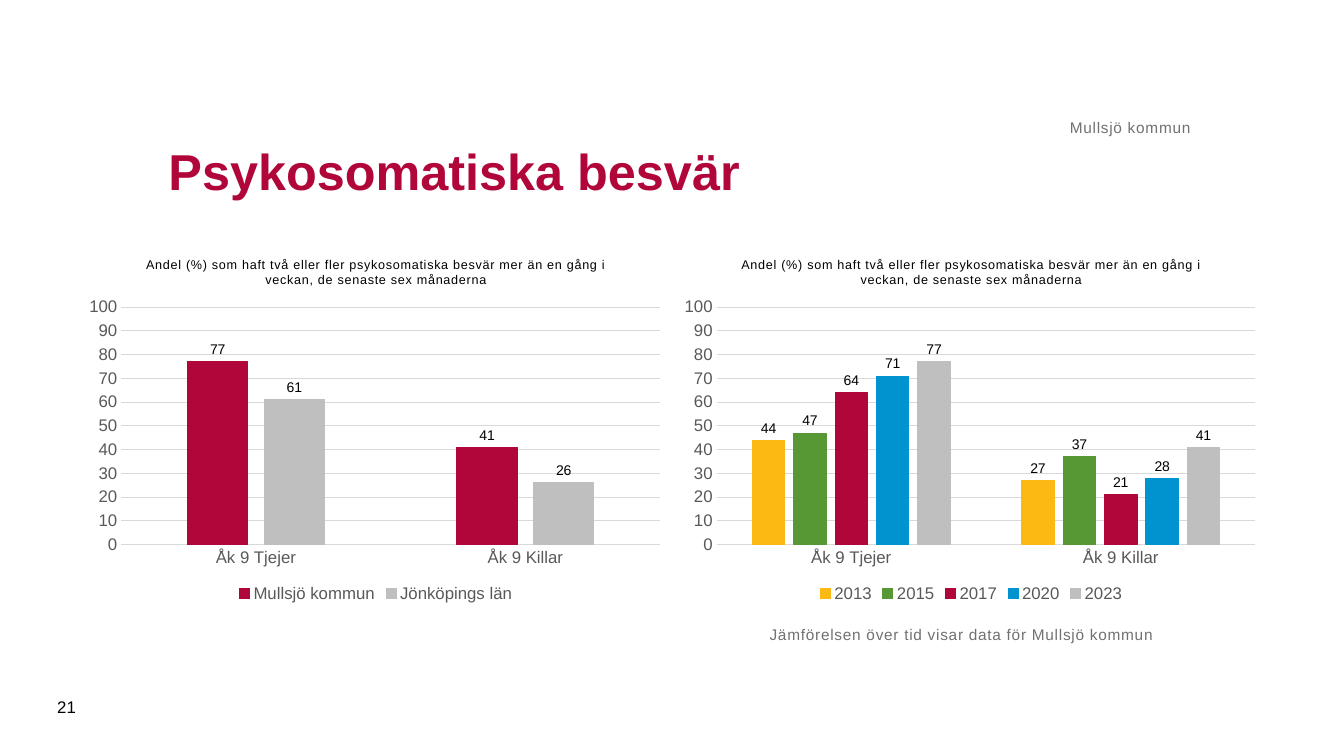
from lxml import etree
from pptx import Presentation
from pptx.chart.data import CategoryChartData
from pptx.dml.color import RGBColor
from pptx.enum.chart import XL_CHART_TYPE, XL_LABEL_POSITION, XL_LEGEND_POSITION, XL_TICK_MARK
from pptx.enum.text import MSO_ANCHOR, PP_ALIGN
from pptx.oxml import parse_xml
from pptx.oxml.ns import nsdecls
from pptx.util import Pt

PX = 9525
FONT = "Arial"
NUMBER_FORMAT = "#,##0;#,##0"
COLORS = {
    "crimson": "B1063A", "silver": "BFBFBF", "yellow": "FDB913", "green": "579835",
    "blue": "0093D0", "grid": "D9D9D9", "axis": "595959", "muted": "717171", "black": "000000",
}
CATEGORIES = ["Åk 9 Tjejer", "Åk 9 Killar"]
CHART_TITLE = ("Andel (%) som haft två eller fler psykosomatiska besvär mer än en gång i veckan, "
               "de senaste sex månaderna")
REGION_SERIES = [
    ("Mullsjö kommun", [77, 41], "crimson"),
    ("Jönköpings län", [61, 26], "silver"),
]
YEAR_SERIES = [
    ("2013", [44, 27], "yellow"),
    ("2015", [47, 37], "green"),
    ("2017", [64, 21], "crimson"),
    ("2020", [71, 28], "blue"),
    ("2023", [77, 41], "silver"),
]


def box(*lengths):
    """Turn px lengths into EMU."""
    return [n * PX for n in lengths]


def rgb(name):
    """Look up a named colour."""
    return RGBColor.from_string(COLORS[name])


def style_font(font, size, color, bold=False):
    """Set typeface, size, colour and weight."""
    font.name, font.size, font.bold = FONT, Pt(size), bold
    font.color.rgb = rgb(color)


def style_line(line, color):
    """Give a line its colour and the common thin width."""
    line.color.rgb = rgb(color)
    line.width = Pt(0.75)


def add_text(s, at, text, size, color, bold=False, anchor=MSO_ANCHOR.TOP,
             align=PP_ALIGN.LEFT, inset=True, spacing=0):
    """Add a one-paragraph text box."""
    tf = s.shapes.add_textbox(*box(*at)).text_frame
    tf.word_wrap = True
    tf.vertical_anchor = anchor
    if not inset:
        tf.margin_left = tf.margin_top = tf.margin_right = tf.margin_bottom = 0
    p = tf.paragraphs[0]
    p.alignment = align
    r = p.add_run()
    r.text = text
    style_font(p.font, size, color, bold)
    if spacing:
        r._r.get_or_add_rPr().set("spc", str(spacing))


def set_plot_area(chart, x, y, w, h):
    """Fix the inner plot area as fractions of the chart."""
    plot_area = chart._chartSpace.chart.plotArea
    for old in plot_area.findall("{*}layout"):
        plot_area.remove(old)
    layout = parse_xml(f"<c:layout {nsdecls('c')}><c:manualLayout/></c:layout>")
    values = [("layoutTarget", "inner"), ("xMode", "edge"), ("yMode", "edge"),
              ("x", x), ("y", y), ("w", w), ("h", h)]
    for tag, value in values:
        etree.SubElement(layout[0], f"{{{layout.nsmap['c']}}}{tag}").set("val", str(value))
    plot_area.insert(0, layout)


def style_axes(chart):
    """Format the category and value axes."""
    for axis in (chart.category_axis, chart.value_axis):
        axis.major_tick_mark = axis.minor_tick_mark = XL_TICK_MARK.NONE
        style_font(axis.tick_labels.font, 12, "axis")
    style_line(chart.category_axis.format.line, "grid")
    values = chart.value_axis
    values.minimum_scale, values.maximum_scale, values.major_unit = 0, 100, 10
    values.tick_labels.number_format = NUMBER_FORMAT
    values.tick_labels.number_format_is_linked = False
    values.format.line.fill.background()
    style_line(values.major_gridlines.format.line, "grid")


def add_column_chart(s, at, series):
    """Add a titled column chart with value labels."""
    data = CategoryChartData(number_format=NUMBER_FORMAT)
    data.categories = CATEGORIES
    for name, values, _ in series:
        data.add_series(name, values)
    chart = s.shapes.add_chart(XL_CHART_TYPE.COLUMN_CLUSTERED, *box(*at), data).chart
    style_font(chart.font, 10, "black")

    p = chart.chart_title.text_frame.paragraphs[0]
    r = p.add_run()
    r.text = CHART_TITLE
    style_font(p.font, 9, "black")
    style_font(r.font, 9, "black")
    r._r.get_or_add_rPr().set("spc", "50")
    chart.chart_title.include_in_layout = False

    chart.has_legend = True
    chart.legend.position = XL_LEGEND_POSITION.BOTTOM
    chart.legend.include_in_layout = False
    style_font(chart.legend.font, 12, "axis")
    style_axes(chart)
    set_plot_area(chart, 0.07, 0.18, 0.91, 0.65)

    plot = chart.plots[0]
    plot.gap_width, plot.overlap, plot.vary_by_categories = 219, -27, False
    for bars, (_, _, color) in zip(plot.series, series):
        bars.format.fill.solid()
        bars.format.fill.fore_color.rgb = rgb(color)
        style_line(bars.format.line, color)
        labels = bars.data_labels
        labels.show_value = True
        labels.position = XL_LABEL_POSITION.OUTSIDE_END
        labels.number_format = NUMBER_FORMAT
        labels.number_format_is_linked = False
        style_font(labels.font, 10, "black")


def main():
    """Build the slide and save it."""
    prs = Presentation()
    prs.slide_width, prs.slide_height = box(1280, 720)
    s = prs.slides.add_slide(prs.slide_layouts[6])
    for i, series in enumerate((REGION_SERIES, YEAR_SERIES)):
        add_column_chart(s, (76 + 567 * i, 230, 564, 348), series)
    add_text(s, (151, 94, 983, 136), "Psykosomatiska besvär", 36, "crimson", bold=True,
             anchor=MSO_ANCHOR.MIDDLE)
    add_text(s, (733, 595, 510, 90), "Jämförelsen över tid visar data för Mullsjö kommun",
             11, "muted", inset=False, spacing=50)
    add_text(s, (151, 60, 983, 70), "Mullsjö kommun", 11, "muted", anchor=MSO_ANCHOR.BOTTOM,
             align=PP_ALIGN.RIGHT, inset=False, spacing=50)
    add_text(s, (45, 654, 55, 38), "21", 12, "black", anchor=MSO_ANCHOR.MIDDLE)
    prs.save("out.pptx")


if __name__ == "__main__":
    main()
